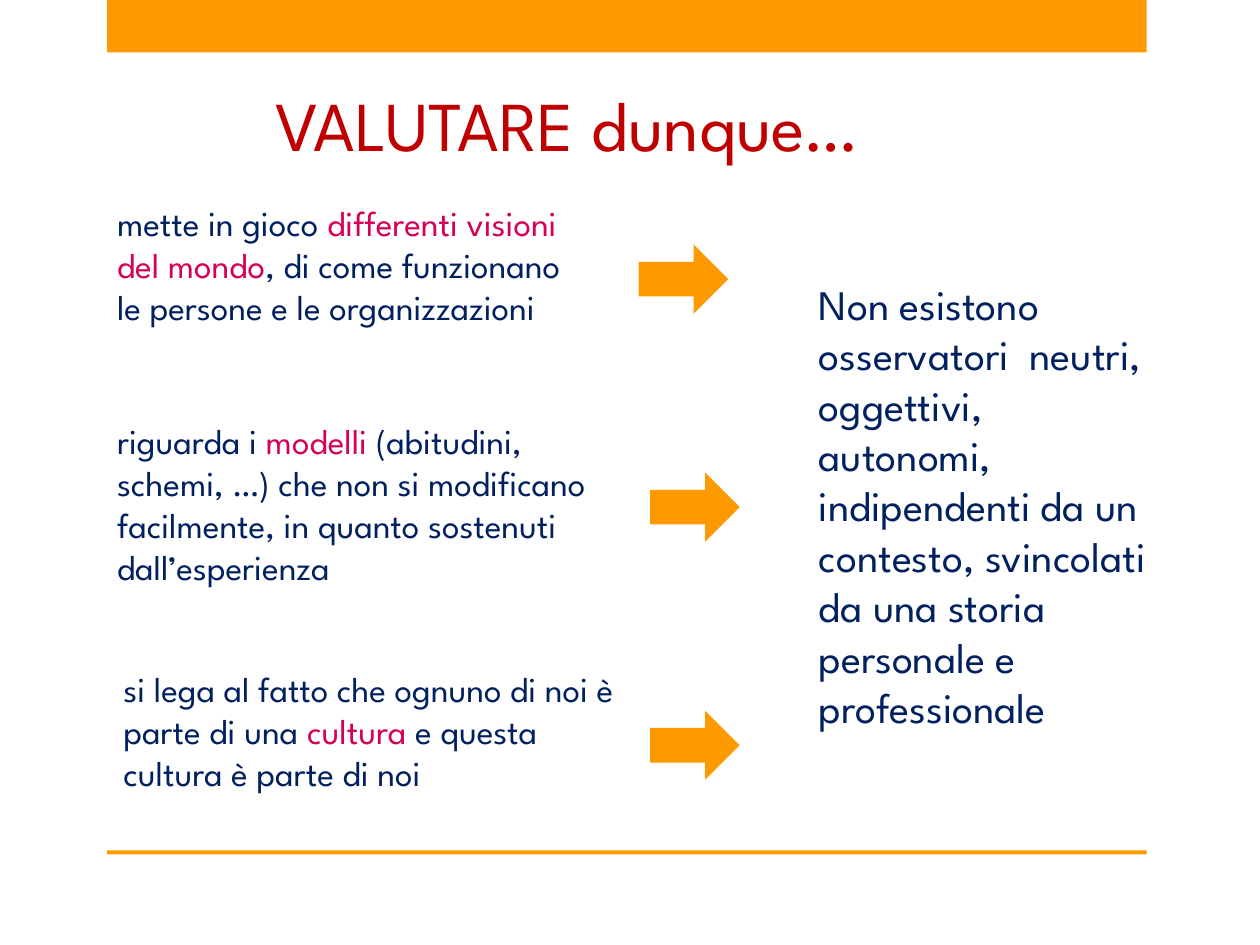
from dataclasses import dataclass

from pptx import Presentation
from pptx.dml.color import RGBColor
from pptx.enum import shapes, text
from pptx.util import Pt


@dataclass(frozen=True)
class Theme:
    font: str = "League Spartan"
    orange: str = "FF9900"
    navy: str = "002060"
    pink: str = "D60057"
    red: str = "C00000"
    title_size: int = 40
    reason_size: int = 20
    conclusion_size: int = 24


THEME = Theme()
BAND_LEFT, BAND_WIDTH = 61.2, 594
ARROW_WIDTH, ARROW_HEIGHT = 51.2, 39.6

# Each reason: text box frame, (before, highlight, after), arrow left and top
REASONS = [
    ((59.8, 111.6, 283.7, 104.4),
     ("mette in gioco ", "differenti visioni del mondo",
      ", di come funzionano le persone e le organizzazioni"),
     (365, 139.7)),
    ((59.8, 236.2, 305.3, 128.2),
     ("riguarda i ", "modelli ",
      "(abitudini, schemi, …) che non si modificano facilmente, "
      "in quanto sostenuti dall’esperienza"),
     (371.5, 270)),
    ((63.4, 378, 301.7, 80),
     ("si lega al fatto che ognuno di noi è parte di una ", "cultura",
      " e questa cultura è parte di noi"),
     (371.5, 406.1)),
]

CONCLUSION = [
    "Non esistono osservatori  neutri, oggettivi,",
    "autonomi,",
    "indipendenti da un contesto, svincolati da una storia personale e professionale",
]


def add_solid(page, kind, left, top, width, height):
    """Add an orange preset shape without outline or shadow."""
    solid = page.shapes.add_shape(kind, Pt(left), Pt(top), Pt(width), Pt(height))
    solid.shadow.inherit = False
    solid.fill.solid()
    solid.fill.fore_color.rgb = RGBColor.from_string(THEME.orange)
    solid.line.fill.background()


def add_text(page, frame, paragraphs, size):
    """Add a text box; each paragraph is a list of (wording, colour) spans."""
    box = page.shapes.add_textbox(*map(Pt, frame))
    body = box.text_frame
    body.word_wrap = True
    body.vertical_anchor = text.MSO_ANCHOR.TOP
    for index, spans in enumerate(paragraphs):
        para = body.add_paragraph() if index else body.paragraphs[0]
        para.alignment = text.PP_ALIGN.LEFT
        for wording, colour in spans:
            span = para.add_run()
            span.text = wording
            span.font.name = THEME.font
            span.font.size = Pt(size)
            span.font.color.rgb = RGBColor.from_string(colour)


def add_reason(page, frame, wording, arrow):
    """Add a statement with its highlighted words and the arrow beside it."""
    colours = (THEME.navy, THEME.pink, THEME.navy)
    add_text(page, frame, [zip(wording, colours)], THEME.reason_size)
    add_solid(page, shapes.MSO_SHAPE.RIGHT_ARROW, *arrow, ARROW_WIDTH, ARROW_HEIGHT)


def main():
    deck = Presentation()
    deck.slide_width, deck.slide_height = Pt(720), Pt(540)
    page = deck.slides.add_slide(deck.slide_layouts[6])

    for top, height in ((0, 30), (486, 2.2)):
        add_solid(page, shapes.MSO_SHAPE.RECTANGLE, BAND_LEFT, top, BAND_WIDTH, height)
    add_text(page, (150.5, 43.2, 418.3, 55.4),
             [[("VALUTARE dunque…", THEME.red)]], THEME.title_size)
    for reason in REASONS:
        add_reason(page, *reason)
    add_text(page, (460.8, 155.5, 215.3, 269.3),
             [[(wording, THEME.navy)] for wording in CONCLUSION], THEME.conclusion_size)

    deck.save("out.pptx")


if __name__ == "__main__":
    main()
